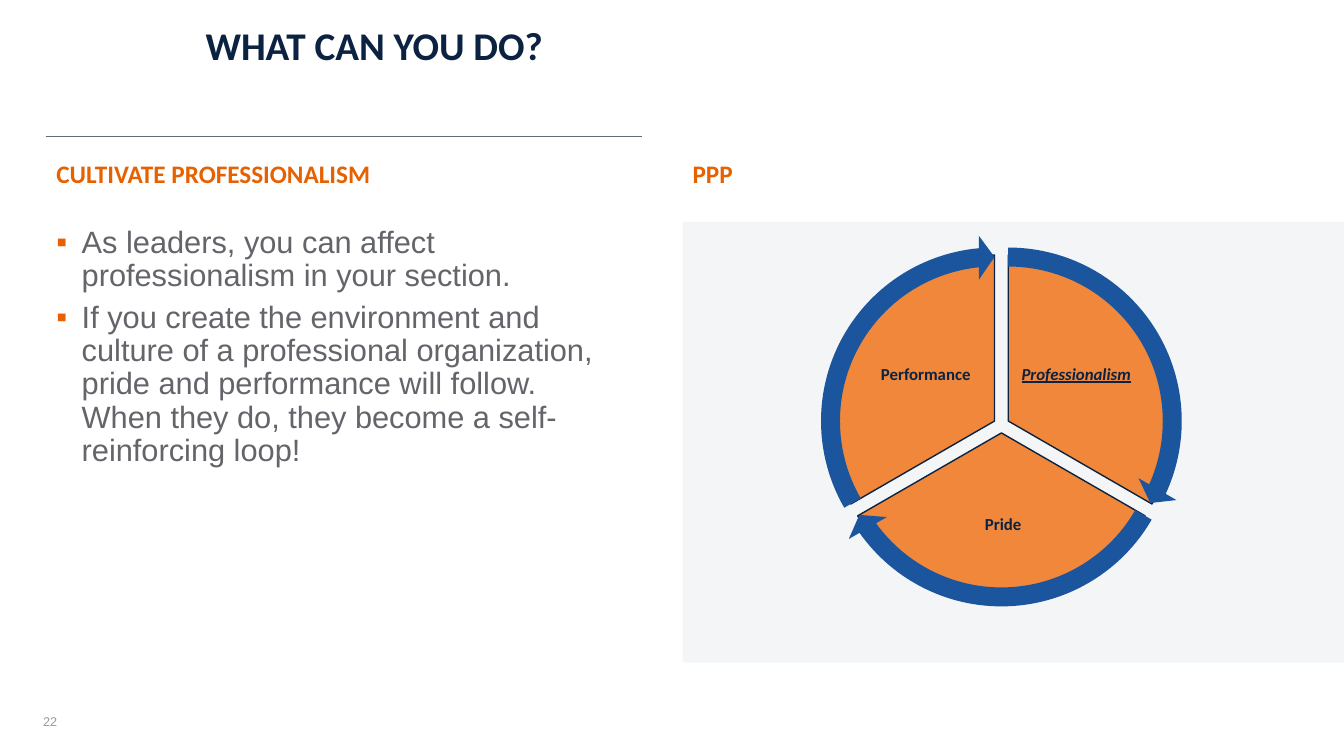
from dataclasses import dataclass
from math import cos, radians, sin

from lxml.etree import SubElement
from pptx import Presentation
from pptx.dml.color import RGBColor
from pptx.enum.shapes import MSO_CONNECTOR, MSO_SHAPE as Preset
from pptx.enum.text import MSO_ANCHOR as Anchor, PP_ALIGN as Align
from pptx.oxml.ns import qn
from pptx.shapes.autoshape import Shape
from pptx.slide import Slide
from pptx.text.text import _Paragraph as Paragraph
from pptx.util import Cm, Pt

COLORS = {
    "navy": "0B2341",
    "accent": "E86100",
    "body": "63656A",
    "muted": "999999",
    "rule": "606C7C",
    "panel": "F0F2F4",
    "sector": "F0873B",
    "arrow": "1B559E",
}
HUB_X, HUB_Y = 25.23, 10.71
PUSH_OUT = 0.2
SECTOR_SIZE, ARROW_SIZE = 8.36, 9.37
SWEEP = 120
HEAD_ANGLE = 5.46
ARROW_WIDTH, HEAD_WIDTH = 0.051, 0.059
UNITS_PER_DEGREE = 0.6  # 60000 angle units, scaled by 100000


@dataclass
class Style:
    size: float
    color: str
    font: str = "Calibri"
    bold: bool = True
    line_spacing: float = 0.9
    emphasis: bool = False


@dataclass
class TextBlock:
    left: float
    top: float
    width: float
    height: float
    lines: list[str]
    style: Style
    bullets: bool = False
    centered: bool = False
    middle: bool = False
    inset: float | None = None


@dataclass
class Sector:
    start: int
    label: TextBlock


def rgb(name: str) -> RGBColor:
    return RGBColor.from_string(COLORS[name])


def add_bullet(para: Paragraph) -> None:
    props = para._p.get_or_add_pPr()
    props.set("marL", str(Cm(0.64)))
    props.set("indent", str(-Cm(0.64)))
    bullet_color = SubElement(props, qn("a:buClr"))
    SubElement(bullet_color, qn("a:srgbClr"), val=COLORS["accent"])
    SubElement(props, qn("a:buFont"), typeface="Arial")
    SubElement(props, qn("a:buChar"), char="▪")


def add_text(page: Slide, block: TextBlock) -> None:
    box = page.shapes.add_textbox(
        Cm(block.left), Cm(block.top), Cm(block.width), Cm(block.height))
    frame = box.text_frame
    frame.word_wrap = True
    frame.vertical_anchor = Anchor.MIDDLE if block.middle else Anchor.TOP
    if block.inset is not None:
        frame.margin_left = frame.margin_right = Cm(block.inset)
        frame.margin_top = frame.margin_bottom = Cm(block.inset)
    style = block.style
    for index, line in enumerate(block.lines):
        para = frame.add_paragraph() if index else frame.paragraphs[0]
        if block.bullets:
            add_bullet(para)
            para.space_after = Pt(6)
        para.alignment = Align.CENTER if block.centered else Align.LEFT
        para.line_spacing = style.line_spacing
        span = para.add_run()
        span.text = line
        span.font.name = style.font
        span.font.size = Pt(style.size)
        span.font.bold = style.bold
        span.font.italic = span.font.underline = style.emphasis
        span.font.color.rgb = rgb(style.color)


def add_filled(page: Slide, preset: Preset, left: float, top: float,
               width: float, height: float, fill: str) -> Shape:
    shape = page.shapes.add_shape(
        preset, Cm(left), Cm(top), Cm(width), Cm(height))
    shape.shadow.inherit = False
    shape.fill.solid()
    shape.fill.fore_color.rgb = rgb(fill)
    shape.line.fill.background()
    return shape


def add_ring_part(page: Slide, preset: Preset, start: int, size: float,
                  fill: str, adjustments: list[float]) -> Shape:
    """Place a part of the cycle, pushed out from the hub along its middle."""
    middle = radians(start + SWEEP / 2)
    left = HUB_X + PUSH_OUT * cos(middle) - size / 2
    top = HUB_Y + PUSH_OUT * sin(middle) - size / 2
    part = add_filled(page, preset, left, top, size, size, fill)
    for index, value in enumerate(adjustments):
        part.adjustments[index] = value
    return part


def add_cycle(page: Slide, sectors: list[Sector]) -> None:
    for sector in sectors:
        end = (sector.start + SWEEP) % 360
        pie = add_ring_part(
            page, Preset.PIE, sector.start, SECTOR_SIZE, "sector",
            [sector.start * UNITS_PER_DEGREE, end * UNITS_PER_DEGREE])
        pie.line.color.rgb = rgb("navy")
        pie.line.width = Pt(1)
        add_text(page, sector.label)
    for sector in sectors:
        end = (sector.start + SWEEP) % 360
        add_ring_part(
            page, Preset.CIRCULAR_ARROW, sector.start, ARROW_SIZE, "arrow",
            [ARROW_WIDTH, HEAD_ANGLE * UNITS_PER_DEGREE,
             (end - HEAD_ANGLE) * UNITS_PER_DEGREE,
             sector.start * UNITS_PER_DEGREE, HEAD_WIDTH])


def add_backdrop(page: Slide) -> None:
    panel = add_filled(page, Preset.RECTANGLE, 17.2, 5.59, 16.66, 11.1, "panel")
    panel_color = panel._element.spPr.find(qn("a:solidFill"))[0]
    SubElement(panel_color, qn("a:alpha"), val="75000")
    rule = page.shapes.add_connector(
        MSO_CONNECTOR.STRAIGHT, Cm(1.15), Cm(3.43), Cm(16.18), Cm(3.43))
    rule.line.color.rgb = rgb("rule")
    rule.line.width = Pt(0.5)
    SubElement(rule._element.spPr, qn("a:effectLst"))


def sector_label(left: float, top: float, width: float, height: float,
                 text: str, emphasis: bool = False) -> TextBlock:
    return TextBlock(left, top, width, height, [text],
                     Style(12, "navy", emphasis=emphasis),
                     centered=True, middle=True, inset=0.05)


HEADING = Style(18, "accent")
TEXT_BLOCKS = [
    TextBlock(4.93, 0.64, 27.76, 1.85, ["WHAT CAN YOU DO?"],
              Style(28, "navy", line_spacing=0.8)),
    TextBlock(1.17, 5.59, 14.6, 11.1, [
        "As leaders, you can affect professionalism in your section.",
        "If you create the environment and culture of a professional "
        "organization, pride and performance will follow. When they do, "
        "they become a self-reinforcing loop!",
    ], Style(22, "body", "Arial", bold=False), bullets=True),
    TextBlock(1.17, 3.94, 15.04, 1.52, ["CULTIVATE PROFESSIONALISM"], HEADING),
    TextBlock(17.2, 3.94, 15.27, 1.45, ["PPP"], HEADING),
    TextBlock(0.84, 17.68, 0.89, 1.02, ["22"],
              Style(9, "muted", "Arial", bold=False, line_spacing=1.0),
              middle=True),
]
SECTORS = [
    Sector(270, sector_label(25.63, 8.2, 2.97, 2.49, "Professionalism", True)),
    Sector(30, sector_label(23.04, 12.14, 4.47, 2.18, "Pride")),
    Sector(150, sector_label(21.84, 8.2, 2.97, 2.49, "Performance")),
]


def main() -> None:
    deck = Presentation()
    deck.slide_width, deck.slide_height = Cm(33.86), Cm(19.05)
    page = deck.slides.add_slide(deck.slide_layouts[6])
    add_backdrop(page)
    for block in TEXT_BLOCKS:
        add_text(page, block)
    add_cycle(page, SECTORS)
    deck.save("out.pptx")


if __name__ == "__main__":
    main()
